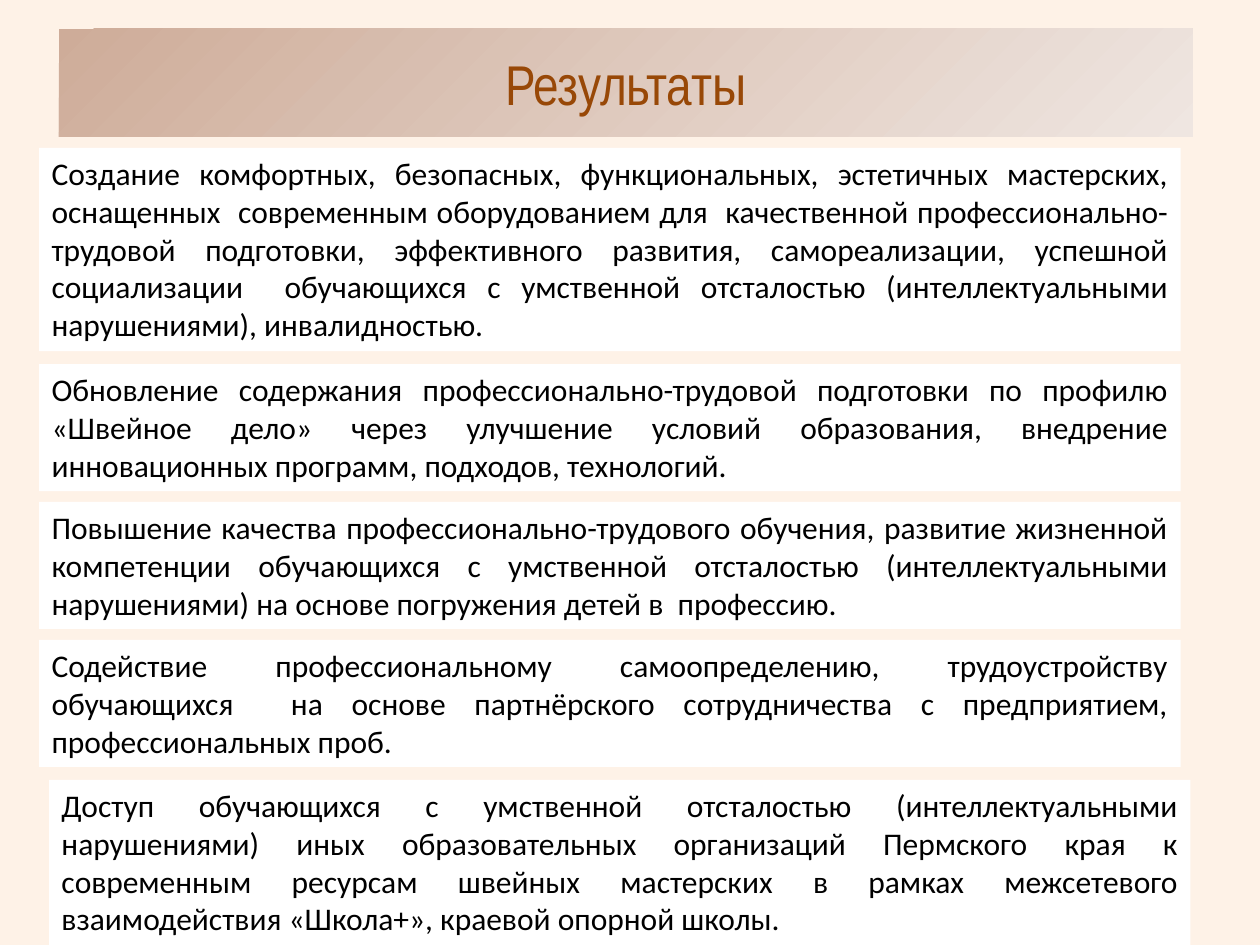
from dataclasses import dataclass

from pptx import Presentation
from pptx.dml.color import RGBColor
from pptx.enum.shapes import MSO_SHAPE
from pptx.enum.text import MSO_ANCHOR, MSO_AUTO_SIZE, PP_ALIGN
from pptx.slide import Slide
from pptx.util import Cm, Pt

CREAM = RGBColor(0xFE, 0xF2, 0xE7)
TAN = RGBColor(0xCE, 0xAC, 0x99)
PALE_TAN = RGBColor(0xEF, 0xE6, 0xE1)
BROWN = RGBColor(0x98, 0x48, 0x07)
WHITE = RGBColor(0xFF, 0xFF, 0xFF)
BLACK = RGBColor(0x00, 0x00, 0x00)

RESULT_WIDTH = 23.01
LINE_HEIGHT = 0.77
PADDING = 0.25


@dataclass(frozen=True)
class Result:
    top: float
    lines: int
    text: str
    left: float = 0.79


RESULTS = [
    Result(2.98, 5,
           "Создание комфортных, безопасных, функциональных, эстетичных мастерских, "
           "оснащенных  современным оборудованием для  качественной "
           "профессионально-трудовой подготовки, эффективного развития, "
           "самореализации, успешной социализации  обучающихся с умственной "
           "отсталостью (интеллектуальными нарушениями), инвалидностью."),
    Result(7.34, 3,
           "Обновление содержания профессионально-трудовой подготовки по профилю "
           "«Швейное дело» через улучшение условий образования, внедрение "
           "инновационных программ, подходов, технологий."),
    Result(10.12, 3,
           "Повышение качества профессионально-трудового обучения, развитие "
           "жизненной компетенции обучающихся с умственной отсталостью "
           "(интеллектуальными нарушениями) на основе погружения детей в  профессию."),
    Result(12.9, 3,
           "Содействие профессиональному самоопределению, трудоустройству "
           "обучающихся  на основе партнёрского сотрудничества с предприятием, "
           "профессиональных проб."),
    Result(15.72, 4,
           "Доступ обучающихся с умственной отсталостью (интеллектуальными "
           "нарушениями) иных образовательных организаций Пермского края к "
           "современным ресурсам швейных мастерских в рамках межсетевого "
           "взаимодействия «Школа+», краевой опорной школы.",
           left=0.99),
]


def add_text(tf, text: str, font: str, size: int, color: RGBColor,
             align: PP_ALIGN) -> None:
    tf.word_wrap = True
    p = tf.paragraphs[0]
    p.alignment = align
    r = p.add_run()
    r.text = text
    r.font.name = font
    r.font.size = Pt(size)
    r.font.color.rgb = color


def add_title(s: Slide, text: str) -> None:
    sp = s.shapes.add_shape(MSO_SHAPE.RECTANGLE,
                            Cm(1.19), Cm(0.58), Cm(22.86), Cm(2.18))
    sp.shadow.inherit = False
    sp.line.fill.background()
    sp.fill.gradient()
    sp.fill.gradient_angle = 315
    for stop, color in zip(sp.fill.gradient_stops, (TAN, PALE_TAN)):
        stop.color.rgb = color
    sp.text_frame.vertical_anchor = MSO_ANCHOR.MIDDLE
    add_text(sp.text_frame, text, "Arial Narrow", 32, BROWN, PP_ALIGN.CENTER)


def add_result(s: Slide, result: Result) -> None:
    height = PADDING + LINE_HEIGHT * result.lines
    sp = s.shapes.add_textbox(Cm(result.left), Cm(result.top),
                              Cm(RESULT_WIDTH), Cm(height))
    sp.fill.solid()
    sp.fill.fore_color.rgb = WHITE
    tf = sp.text_frame
    add_text(tf, result.text, "Calibri", 18, BLACK, PP_ALIGN.JUSTIFY)
    tf.auto_size = MSO_AUTO_SIZE.SHAPE_TO_FIT_TEXT


def main() -> None:
    prs = Presentation()
    prs.slide_width, prs.slide_height = Cm(25.4), Cm(19.05)
    s = prs.slides.add_slide(prs.slide_layouts[6])
    s.background.fill.solid()
    s.background.fill.fore_color.rgb = CREAM
    add_title(s, "Результаты")
    for result in RESULTS:
        add_result(s, result)
    prs.save("out.pptx")


if __name__ == "__main__":
    main()
